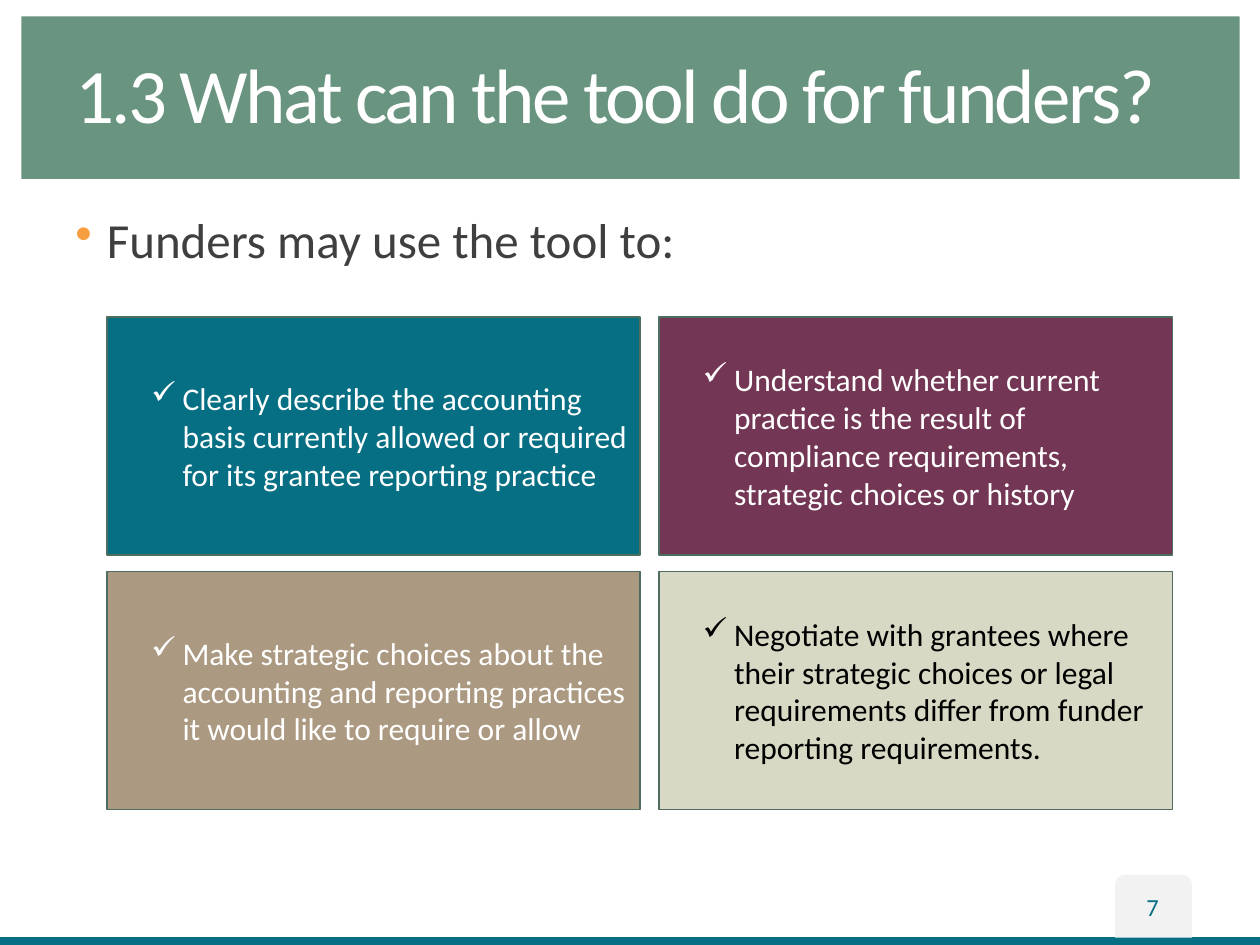
from lxml import etree
from pptx import Presentation
from pptx.dml.color import RGBColor
from pptx.enum.shapes import MSO_SHAPE
from pptx.enum.text import MSO_ANCHOR, PP_ALIGN
from pptx.oxml.ns import qn
from pptx.util import Cm, Pt

RECTANGLE = MSO_SHAPE.RECTANGLE
TAB = MSO_SHAPE.ROUND_2_SAME_RECTANGLE
MIDDLE, TOP = MSO_ANCHOR.MIDDLE, MSO_ANCHOR.TOP
LEFT, CENTER = PP_ALIGN.LEFT, PP_ALIGN.CENTER
FONT = "Calibri"
TEAL, WHITE, OUTLINE = "076F83", "FFFFFF", "4E6D5F"

COLUMNS = [(2.16, 10.74), (13.28, 10.36)]
ROWS = [6.39, 11.52]
CARD_HEIGHT = 4.8
CARDS = [
    ("Clearly describe the accounting basis currently allowed or required "
     "for its grantee reporting practice", TEAL, WHITE),
    ("Understand whether current practice is the result of compliance "
     "requirements, strategic choices or history", "733654", WHITE),
    ("Make strategic choices about the accounting and reporting practices "
     "it would like to require or allow", "AC9981", WHITE),
    ("Negotiate with grantees where their strategic choices or legal "
     "requirements differ from funder reporting requirements.", "D8D9C4", "000000"),
]


def color(value):
    """Turn a hex string into a colour."""
    return RGBColor.from_string(value)


def set_values(target, values):
    """Set each attribute named in the dict."""
    for name, value in values.items():
        setattr(target, name, value)


def add_block(slide, box, fill, kind=RECTANGLE, outline=None):
    """Add a filled preset shape at a box given in centimetres."""
    shape = slide.shapes.add_shape(kind, *map(Cm, box))
    shape.shadow.inherit = False
    shape.fill.solid()
    shape.fill.fore_color.rgb = color(fill)
    if outline:
        shape.line.color.rgb = color(outline)
        shape.line.width = Pt(1)
    else:
        shape.line.fill.background()
    return shape


def add_bullet(paragraph, symbol, margin, bullet_color):
    """Give a paragraph a hanging bullet."""
    properties = paragraph._p.get_or_add_pPr()
    properties.set("marL", str(Cm(margin)))
    properties.set("indent", str(-Cm(0.635)))
    holder = etree.SubElement(properties, qn("a:buClr"))
    etree.SubElement(holder, qn("a:srgbClr"), val=bullet_color)
    etree.SubElement(properties, qn("a:buChar"), char=symbol)


def write_text(shape, text, size, text_color, anchor=MIDDLE, align=LEFT, line_spacing=1.0, bullet=None):
    """Write one formatted paragraph into a shape and return its run."""
    set_values(shape.text_frame, {"word_wrap": True, "vertical_anchor": anchor})
    paragraph = shape.text_frame.paragraphs[0]
    set_values(paragraph, {"alignment": align, "line_spacing": line_spacing})
    if bullet:
        add_bullet(paragraph, *bullet)
    run = paragraph.add_run()
    run.text = text
    set_values(run.font, {"name": FONT, "size": Pt(size)})
    run.font.color.rgb = color(text_color)
    return run


def add_text(slide, box, *args, **options):
    """Add a text box at a box given in centimetres."""
    return write_text(slide.shapes.add_textbox(*map(Cm, box)), *args, **options)


def add_cards(slide):
    """Lay the four tick cards out on a two by two grid."""
    for index, (text, fill, text_color) in enumerate(CARDS):
        row, column = divmod(index, len(COLUMNS))
        left, width = COLUMNS[column]
        card = add_block(slide, (left, ROWS[row], width, CARD_HEIGHT), fill, outline=OUTLINE)
        write_text(card, text, 18, text_color, bullet=("✓", 1.27, text_color))


def main():
    """Build the slide and save it."""
    presentation = Presentation()
    set_values(presentation, {"slide_width": Cm(25.4), "slide_height": Cm(19.05)})
    slide = presentation.slides.add_slide(presentation.slide_layouts[6])
    add_block(slide, (0.43, 0.33, 24.56, 3.28), "699480")
    add_block(slide, (0, 18.89, 25.4, 0.16), TEAL)
    add_block(slide, (22.48, 17.63, 1.55, 1.27), "F2F2F2", TAB)
    add_text(slide, (22.45, 17.65, 1.57, 1.24), "7", 14, TEAL, align=CENTER)
    title = add_text(slide, (1.27, 0.33, 22.76, 3.3), "1.3 What can the tool do for funders?",
                     44, WHITE, line_spacing=0.9)
    title.font._element.set("spc", "-150")
    add_text(slide, (1.27, 4.24, 22.76, 12.93), "Funders may use the tool to:", 28, "3E3F3E",
             anchor=TOP, line_spacing=0.9, bullet=("•", 0.635, "F79E41"))
    add_cards(slide)
    presentation.save("out.pptx")


if __name__ == "__main__":
    main()
